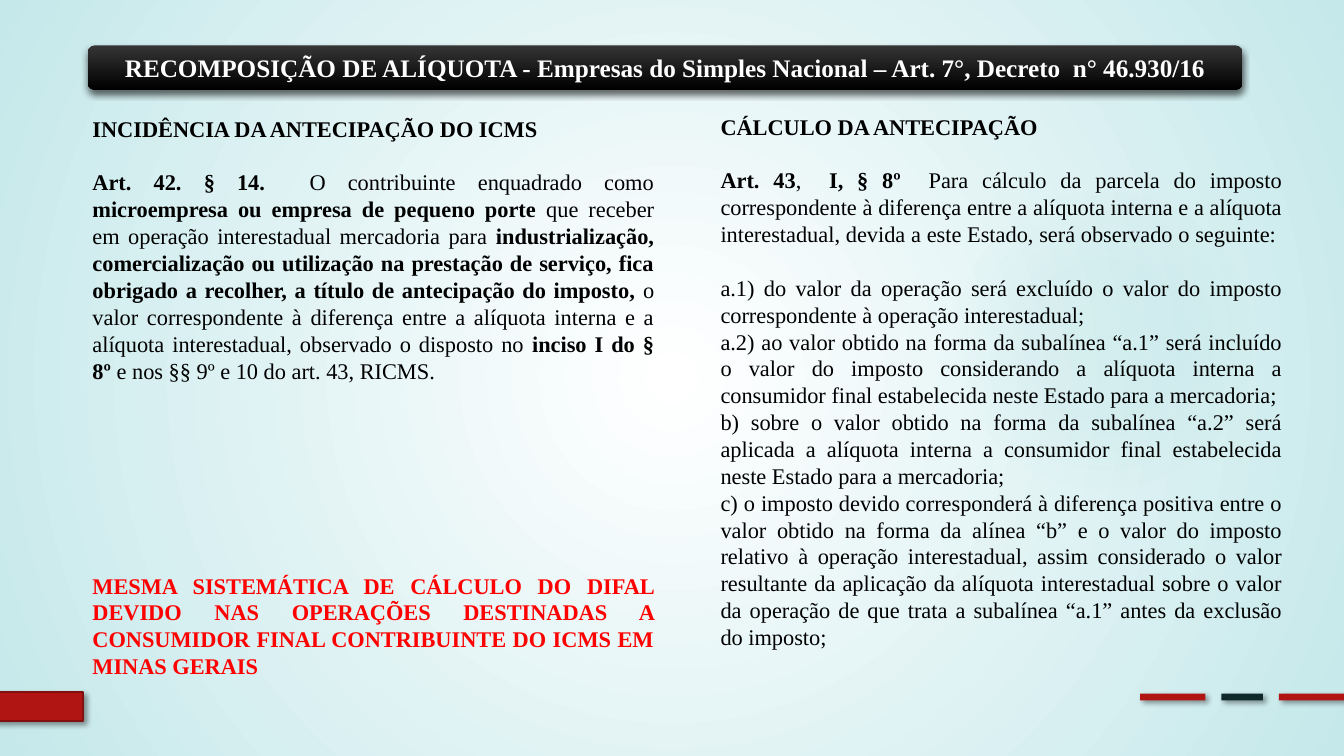
from lxml import etree
from pptx import Presentation
from pptx.dml.color import RGBColor
from pptx.enum.shapes import MSO_SHAPE
from pptx.enum.text import MSO_ANCHOR, PP_ALIGN
from pptx.oxml.ns import qn
from pptx.util import Pt

RECTANGLE, ROUNDED, ELLIPSE = MSO_SHAPE.RECTANGLE, MSO_SHAPE.ROUNDED_RECTANGLE, MSO_SHAPE.OVAL
MIDDLE, TOP = MSO_ANCHOR.MIDDLE, MSO_ANCHOR.TOP
CENTER, JUSTIFY = PP_ALIGN.CENTER, PP_ALIGN.JUSTIFY

WHITE = RGBColor(0xFF, 0xFF, 0xFF)
BLACK = RGBColor(0x00, 0x00, 0x00)
CHARCOAL = RGBColor(0x35, 0x35, 0x35)
PALE_AQUA = RGBColor(0xC5, 0xE8, 0xEA)
AQUA = RGBColor(0x50, 0xB9, 0xC1)
CRIMSON = RGBColor(0xB0, 0x15, 0x13)
DARK_CRIMSON = RGBColor(0x82, 0x10, 0x0E)
DARK_TEAL = RGBColor(0x0F, 0x28, 0x2A)
RED = RGBColor(0xFF, 0x00, 0x00)

FONT = "Times New Roman"
LINE = 19.2

TITLE = "RECOMPOSIÇÃO DE ALÍQUOTA - Empresas do Simples Nacional – Art. 7°, Decreto  n° 46.930/16"

# Each paragraph: blank lines before it, colour, runs as (text, bold).
INCIDENCE = [
    (0, BLACK, [("INCIDÊNCIA DA ANTECIPAÇÃO DO ICMS", True)]),
    (1, BLACK, [
        ("Art. 42. § 14.", True),
        ("  O contribuinte enquadrado como ", False),
        ("microempresa ou empresa de pequeno porte ", True),
        ("que receber em operação interestadual mercadoria para ", False),
        ("industrialização, comercialização ou utilização na prestação de serviço, fica obrigado "
         "a recolher, a título de antecipação do imposto, ", True),
        ("o valor correspondente à diferença entre a alíquota interna e a alíquota interestadual, "
         "observado o disposto no ", False),
        ("inciso I do § 8º ", True),
        ("e nos §§ 9º e 10 do art. 43, RICMS.", False),
    ]),
    (7, RED, [("MESMA SISTEMÁTICA DE CÁLCULO DO DIFAL DEVIDO NAS OPERAÇÕES DESTINADAS A "
               "CONSUMIDOR FINAL CONTRIBUINTE DO ICMS EM MINAS GERAIS", True)]),
]
CALCULATION = [
    (0, BLACK, [("CÁLCULO DA ANTECIPAÇÃO", True)]),
    (1, BLACK, [
        ("Art. 43", True),
        (",", False),
        ("  I, § 8º", True),
        ("  Para cálculo da parcela do imposto correspondente à diferença entre a alíquota "
         "interna e a alíquota interestadual, devida a este Estado, será observado o "
         "seguinte:  ", False),
    ]),
    (1, BLACK, [("a.1) do valor da operação será excluído o valor do imposto correspondente à "
                 "operação interestadual;", False)]),
    (0, BLACK, [("a.2) ao valor obtido na forma da subalínea “a.1” será incluído o valor do "
                 "imposto considerando a alíquota interna a consumidor final estabelecida neste "
                 "Estado para a mercadoria;", False)]),
    (0, BLACK, [("b) sobre o valor obtido na forma da subalínea “a.2” será aplicada a alíquota "
                 "interna a consumidor final estabelecida neste Estado para a mercadoria;", False)]),
    (0, BLACK, [("c) o imposto devido corresponderá à diferença positiva entre o valor obtido na "
                 "forma da alínea “b” e o valor do imposto relativo à operação interestadual, "
                 "assim considerado o valor resultante da aplicação da alíquota interestadual "
                 "sobre o valor da operação de que trata a subalínea “a.1” antes da exclusão do "
                 "imposto; ", False)]),
]


def add_color(parent, color, alpha):
    """Append a colour with its opacity in percent."""
    value = etree.SubElement(parent, qn("a:srgbClr"), val=str(color))
    etree.SubElement(value, qn("a:alpha"), val=str(alpha * 1000))


def set_gradient(fill, holder, stops, angle=None):
    """Fill with (position, colour, opacity) stops, radial unless an angle is given."""
    fill.gradient()
    gradient = holder.find(qn("a:gradFill"))
    for child in list(gradient):
        gradient.remove(child)
    stop_list = etree.SubElement(gradient, qn("a:gsLst"))
    for position, color, alpha in stops:
        stop = etree.SubElement(stop_list, qn("a:gs"), pos=str(position * 1000))
        add_color(stop, color, alpha)
    if angle is None:
        radial = etree.SubElement(gradient, qn("a:path"), path="circle")
        etree.SubElement(radial, qn("a:fillToRect"), l="50000", t="50000", r="50000", b="50000")
    else:
        etree.SubElement(gradient, qn("a:lin"), ang=str(angle * 60000), scaled="0")


def add_block(slide, kind, left, top, width, height, color=None):
    """Add an unlined preset shape without shadow."""
    block = slide.shapes.add_shape(kind, Pt(left), Pt(top), Pt(width), Pt(height))
    block.shadow.inherit = False
    block.line.fill.background()
    if color is not None:
        block.fill.solid()
        block.fill.fore_color.rgb = color
    return block


def add_shadow(block, alpha, blur, distance, angle):
    """Give a shape an outer black shadow."""
    effects = block._element.spPr.find(qn("a:effectLst"))
    shadow = etree.SubElement(effects, qn("a:outerShdw"), blurRad=str(Pt(blur)),
                              dist=str(Pt(distance)), dir=str(angle * 60000),
                              algn="ctr", rotWithShape="0")
    add_color(shadow, BLACK, alpha)


def add_run(paragraph, text, size, color, bold):
    """Append one formatted run."""
    run = paragraph.add_run()
    run.text = text
    run.font.name = FONT
    run.font.size = Pt(size)
    run.font.bold = bold
    run.font.color.rgb = color


def add_title(slide):
    """Draw the dark bar and set the title over it."""
    left, top, width, height = 62.6, 32.4, 825.1, 31.7
    bar = add_block(slide, ROUNDED, left, top, width, height)
    set_gradient(bar.fill, bar._element.spPr, [(0, CHARCOAL, 100), (100, BLACK, 100)], 90)
    add_shadow(bar, 60, 5, 3, 90)
    title = slide.shapes.title
    bar._element.addnext(title._element)
    title.left, title.top, title.width, title.height = Pt(left), Pt(top), Pt(width), Pt(height)
    frame = title.text_frame
    frame.word_wrap = True
    frame.vertical_anchor = MIDDLE
    frame.margin_top = frame.margin_bottom = 0
    heading = frame.paragraphs[0]
    heading.alignment = CENTER
    add_run(heading, TITLE, 18, WHITE, True)


def add_column(slide, left, top, height, paragraphs):
    """Add a justified column of legal text."""
    column = slide.shapes.add_textbox(Pt(left), Pt(top), Pt(415.4), Pt(height))
    frame = column.text_frame
    frame.word_wrap = True
    frame.vertical_anchor = TOP
    for index, (gap, color, runs) in enumerate(paragraphs):
        paragraph = frame.add_paragraph() if index else frame.paragraphs[0]
        paragraph.alignment = JUSTIFY
        paragraph.line_spacing = Pt(LINE)
        paragraph.space_before = Pt(gap * LINE)
        for text, bold in runs:
            add_run(paragraph, text, 16, color, bold)


def add_decoration(slide):
    """Add the background, the glow, the side tab and the footer dashes."""
    background = slide.background.fill
    set_gradient(background, slide._element.find(".//" + qn("p:bgPr")),
                 [(0, WHITE, 100), (100, PALE_AQUA, 100)])
    glow = add_block(slide, ELLIPSE, 677.5, 131.8, 221.8, 221.8)
    set_gradient(glow.fill, glow._element.spPr, [(0, AQUA, 7), (36, AQUA, 6), (69, AQUA, 0)])
    tab = add_block(slide, RECTANGLE, -12.2, 494.6, 71.6, 20.2, CRIMSON)
    tab.line.color.rgb = DARK_CRIMSON
    tab.line.width = Pt(1.5)
    add_shadow(tab, 40, 4, 3, 45)
    left = 814.4
    for width, color in ((46.6, CRIMSON), (29.6, DARK_TEAL), (46.6, CRIMSON)):
        dash = add_block(slide, RECTANGLE, left, 495.4, width, 5, color)
        add_shadow(dash, 40, 4, 3, 45)
        left += width + 11.5


def main():
    """Build the slide and save it."""
    deck = Presentation()
    deck.slide_width, deck.slide_height = Pt(960), Pt(540)
    slide = deck.slides.add_slide(deck.slide_layouts[5])
    add_decoration(slide)
    add_title(slide)
    add_column(slide, 59, 78.5, 433.4, INCIDENCE)
    add_column(slide, 507.6, 77, 414.7, CALCULATION)
    deck.save("out.pptx")


if __name__ == "__main__":
    main()
